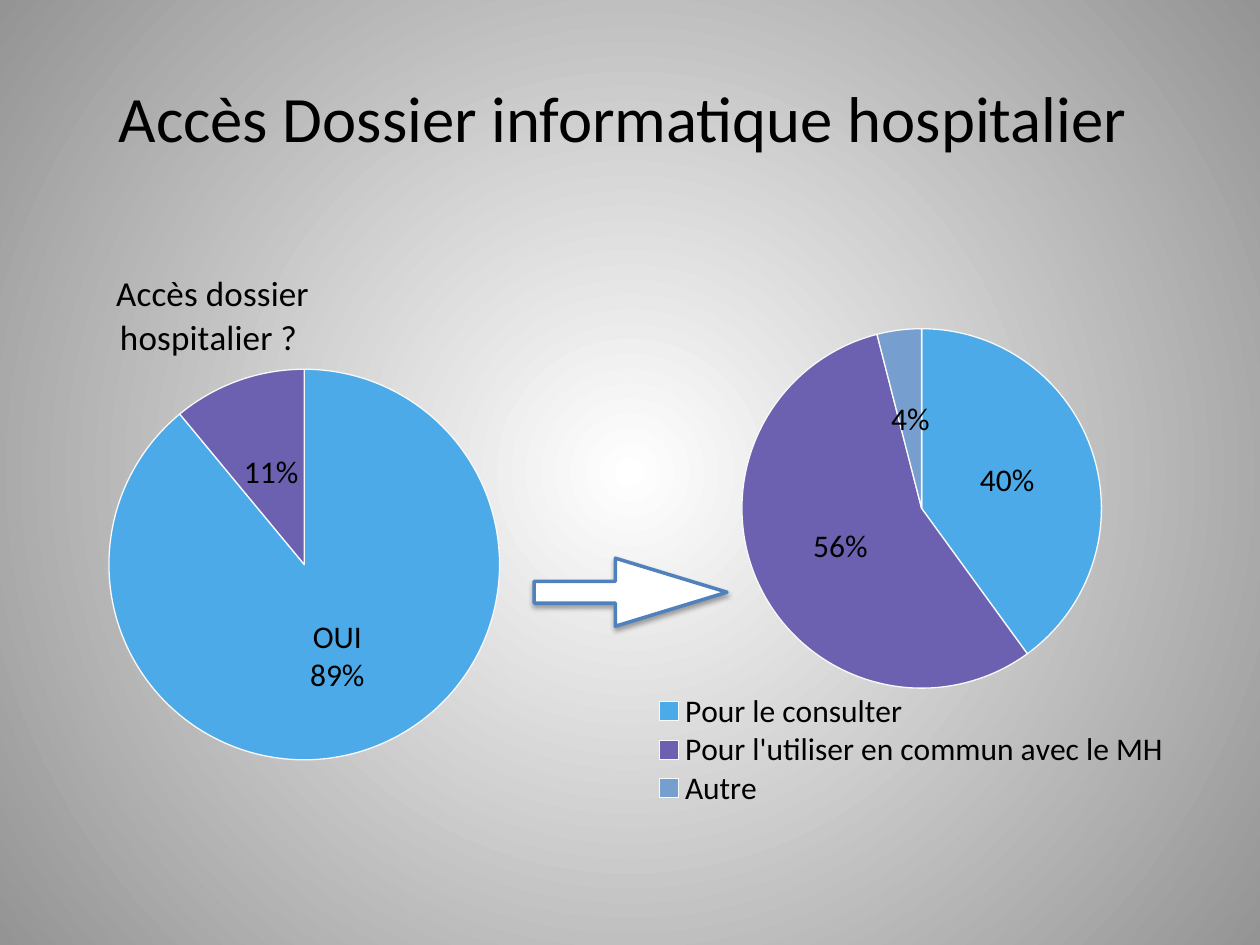
import pptx
import pptx.chart.data
import pptx.dml.color
import pptx.enum.chart
import pptx.enum.shapes
import pptx.enum.text
import pptx.oxml
import pptx.oxml.ns
import pptx.util
from lxml import etree

RGBColor = pptx.dml.color.RGBColor
BLACK = RGBColor(0x00, 0x00, 0x00)
WHITE = RGBColor(0xFF, 0xFF, 0xFF)
ARROW_BLUE = RGBColor(0x4F, 0x81, 0xBD)
SLICE_LINE = RGBColor(0xF9, 0xF9, 0xF9)
SLICE_COLORS = [RGBColor(0x4C, 0xAA, 0xE8), RGBColor(0x6C, 0x61, 0xB0), RGBColor(0x76, 0x9E, 0xCE)]
FONT = "Calibri"

# Boxes are left, top, width, height in percent of the slide.
TITLE = "Accès Dossier informatique hospitalier "
TITLE_BOX = (5, 4, 90, 16.67)
ARROW_BOX = (42.4, 59.07, 15.3, 7.2)

# Layouts are shares of the chart's own size.
ACCESS = {
    "box": (8.4, 26.67, 31.5, 54.4),
    "slices": [("OUI", 89), ("NON", 11)],
    "plot": (0.005, 0.228, 0.99, 0.76),
}
ACCESS_TITLE = "Accès dossier hospitalier ? "
ACCESS_TITLE_POSITION = (0.01, 0.02)
PURPOSE = {
    "box": (48.1, 34.53, 47.5, 50.93),
    "slices": [("Pour le consulter", 40), ("Pour l'utiliser en commun avec le MH", 56), ("Autre", 4)],
    "plot": (0.222, 0.005, 0.611, 0.747),
}
LEGEND_LAYOUT = (0.07, 0.76, 0.88, 0.24)

GRADIENT = """<a:gradFill xmlns:a="http://schemas.openxmlformats.org/drawingml/2006/main" rotWithShape="1">
<a:gsLst><a:gs pos="0"><a:srgbClr val="FFFFFF"/></a:gs><a:gs pos="100000"><a:srgbClr val="949494"/></a:gs></a:gsLst>
<a:path path="circle"><a:fillToRect l="50000" t="50000" r="50000" b="50000"/></a:path></a:gradFill>"""
SHADOW = """<a:outerShdw xmlns:a="http://schemas.openxmlformats.org/drawingml/2006/main"
blurRad="38100" dist="22860" dir="5400000" rotWithShape="0">
<a:srgbClr val="000000"><a:alpha val="35000"/></a:srgbClr></a:outerShdw>"""

qn = pptx.oxml.ns.qn
presentation = pptx.Presentation()
presentation.slide_width = pptx.util.Inches(10)
presentation.slide_height = pptx.util.Inches(7.5)
slide = presentation.slides.add_slide(presentation.slide_layouts[6])


def to_slide(box):
    """Turn percentages of the slide into lengths."""
    sizes = (presentation.slide_width, presentation.slide_height) * 2
    return [round(share * size / 100) for share, size in zip(box, sizes)]


def set_font(font, size):
    font.name = FONT
    font.size = pptx.util.Pt(size)
    font.bold = False
    font.color.rgb = BLACK


def set_layout(element, shares, inner=False):
    """Place a chart part by hand: x, y and optionally width, height."""
    for old in element.findall(qn("c:layout")):
        element.remove(old)
    layout = pptx.oxml.parse_xml(
        '<c:layout xmlns:c="http://schemas.openxmlformats.org/drawingml/2006/chart"><c:manualLayout/></c:layout>')
    settings = [("layoutTarget", "inner")] if inner else []
    settings += [("xMode", "edge"), ("yMode", "edge"), *zip("xywh", shares)]
    for name, value in settings:
        etree.SubElement(layout[0], qn(f"c:{name}")).set("val", str(value))
    overlay = element.find(qn("c:overlay"))
    if overlay is None:
        element.insert(0, layout)
    else:
        overlay.addprevious(layout)


def add_pie(content):
    data = pptx.chart.data.CategoryChartData()
    data.categories = [name for name, _ in content["slices"]]
    data.add_series("Series 1", [value for _, value in content["slices"]])
    chart = slide.shapes.add_chart(
        pptx.enum.chart.XL_CHART_TYPE.PIE, *to_slide(content["box"]), data).chart
    set_font(chart.font, 10)
    chart.has_title = False
    chart.has_legend = False
    plot = chart.plots[0]
    plot.vary_by_categories = True
    series = plot.series[0]
    for index in range(len(content["slices"])):
        point_format = series.points[index].format
        point_format.fill.solid()
        point_format.fill.fore_color.rgb = SLICE_COLORS[index]
        point_format.line.color.rgb = SLICE_LINE
        point_format.line.width = pptx.util.Pt(0.75)
    labels = series.data_labels
    labels.show_value = False
    labels.show_percentage = True
    labels.number_format = "#,##0%"
    labels.number_format_is_linked = False
    labels.position = pptx.enum.chart.XL_LABEL_POSITION.CENTER
    set_font(labels.font, 18)
    set_layout(chart.element.find(".//" + qn("c:plotArea")), content["plot"], inner=True)
    return chart


slide.background.fill.solid()
background = slide.element.find(".//" + qn("p:bgPr"))
background.replace(background[0], pptx.oxml.parse_xml(GRADIENT))

title_frame = slide.shapes.add_textbox(*to_slide(TITLE_BOX)).text_frame
title_frame.word_wrap = True
title_frame.vertical_anchor = pptx.enum.text.MSO_ANCHOR.MIDDLE
title_frame.margin_left = title_frame.margin_right = pptx.util.Inches(0.05)
title_frame.text = TITLE
title_frame.paragraphs[0].alignment = pptx.enum.text.PP_ALIGN.CENTER
set_font(title_frame.paragraphs[0].runs[0].font, 37)

access_chart = add_pie(ACCESS)
access_chart.has_title = True
chart_title = access_chart.chart_title
chart_title.text_frame.text = ACCESS_TITLE
set_font(chart_title.text_frame.paragraphs[0].runs[0].font, 20)
title_element = access_chart.element.find(".//" + qn("c:title"))
title_element.find(qn("c:overlay")).set("val", "1")
set_layout(title_element, ACCESS_TITLE_POSITION)
access_series = access_chart.plots[0].series[0]
access_series.data_labels.show_category_name = True
no_label = access_series.points[1].data_label
no_label.position = pptx.enum.chart.XL_LABEL_POSITION.CENTER
set_font(no_label.font, 18)
no_label_element = access_chart.element.find(".//" + qn("c:dLbl"))
no_label_element.find(qn("c:showVal")).set("val", "0")
no_label_element.find(qn("c:showPercent")).set("val", "1")

purpose_chart = add_pie(PURPOSE)
purpose_chart.has_legend = True
legend = purpose_chart.legend
legend.position = pptx.enum.chart.XL_LEGEND_POSITION.BOTTOM
legend.include_in_layout = True
set_font(legend.font, 18)
set_layout(purpose_chart.element.find(".//" + qn("c:legend")), LEGEND_LAYOUT)

arrow = slide.shapes.add_shape(pptx.enum.shapes.MSO_SHAPE.RIGHT_ARROW, *to_slide(ARROW_BOX))
arrow.adjustments[0] = 0.32
arrow.adjustments[1] = 1.64
arrow.fill.solid()
arrow.fill.fore_color.rgb = WHITE
arrow.line.color.rgb = ARROW_BLUE
arrow.line.width = pptx.util.Pt(2)
arrow.shadow.inherit = False
arrow.element.spPr.find(qn("a:effectLst")).append(pptx.oxml.parse_xml(SHADOW))

presentation.save("out.pptx")
